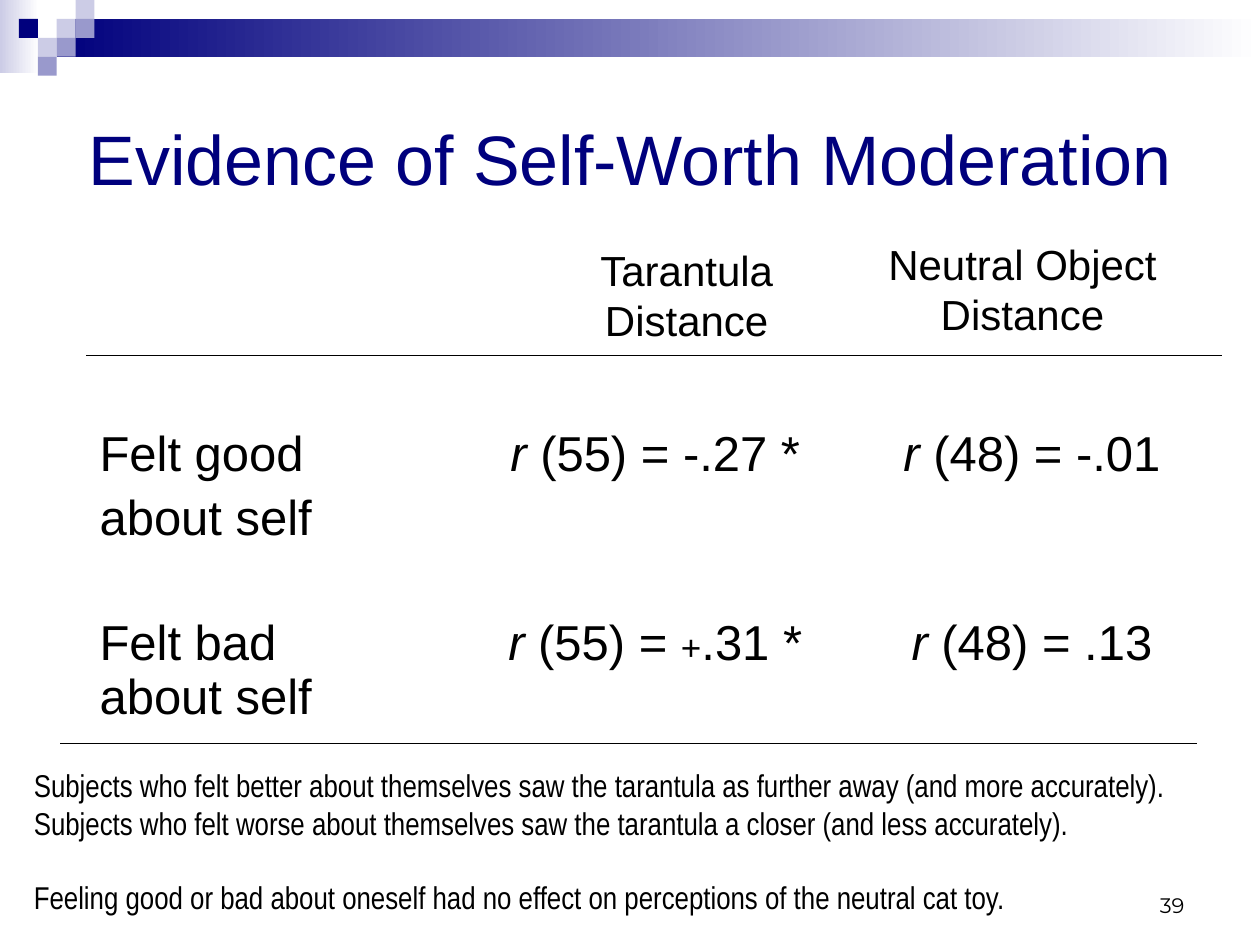
from lxml.etree import SubElement
from pptx import Presentation
from pptx.dml.color import RGBColor
from pptx.enum.shapes import MSO_CONNECTOR, MSO_SHAPE
from pptx.enum.text import MSO_ANCHOR, PP_ALIGN
from pptx.oxml.ns import qn
from pptx.util import Inches, Pt

NAVY = RGBColor(0x00, 0x00, 0x7D)
LAVENDER = RGBColor(0xCC, 0xCC, 0xE6)
PERIWINKLE = RGBColor(0x99, 0x99, 0xCC)
WHITE = RGBColor(0xFF, 0xFF, 0xFF)
BLACK = RGBColor(0x00, 0x00, 0x00)

UNIT = 0.15
SQUARES = [
    (3, 1, LAVENDER), (4, 0, LAVENDER), (4, 1, PERIWINKLE), (2, 2, LAVENDER),
    (1, 1, NAVY), (3, 2, PERIWINKLE), (2, 3, PERIWINKLE),
]
COLUMN_WIDTHS = [3.02, 2.98, 3]
ROW_HEIGHTS = [1.22, 1.69, 1.39]
TOP_MARGINS = [0.57, 0.38]
ROW_LABELS = ["Felt good\nabout self", "Felt bad\vabout self"]
CORRELATIONS = [
    [["(55) = -.27 *"], ["(48) = -.01"]],
    [["(55) = ", "+", ".31 *"], ["(48) = .13"]],
]
FINDINGS = (
    "Subjects who felt better about themselves saw the tarantula as further away "
    "(and more accurately). Subjects who felt worse about themselves saw the "
    "tarantula a closer (and less accurately).\n"
    "Feeling good or bad about oneself had no effect on perceptions of the "
    "neutral cat toy."
)


def inches(*lengths):
    return [Inches(length) for length in lengths]


def style_run(run, size, color=BLACK, font="Arial"):
    run.font.name = font
    run.font.size = Pt(size)
    run.font.color.rgb = color


def style_frame(frame, size, align=PP_ALIGN.LEFT, color=BLACK, font="Arial"):
    for paragraph in frame.paragraphs:
        paragraph.alignment = align
        for run in paragraph.runs:
            style_run(run, size, color, font)


def add_block(slide, box, color, fade=False):
    shape = slide.shapes.add_shape(MSO_SHAPE.RECTANGLE, *inches(*box))
    shape.shadow.inherit = False
    shape.line.fill.background()
    if fade:
        shape.fill.gradient()
        shape.fill.gradient_angle = 0
        for stop, stop_color in zip(shape.fill.gradient_stops, (color, WHITE)):
            stop.color.rgb = stop_color
    else:
        shape.fill.solid()
        shape.fill.fore_color.rgb = color


def add_banner(slide):
    add_block(slide, (0, 0, 0.31, 0.58), LAVENDER, fade=True)
    add_block(slide, (3 * UNIT, UNIT, 10 - 3 * UNIT, 2 * UNIT), NAVY, fade=True)
    for column, row, color in SQUARES:
        add_block(slide, (column * UNIT, row * UNIT, UNIT, UNIT), color)


def add_title(slide, text):
    title = slide.shapes.title
    title.left, title.top, title.width, title.height = inches(0.5, 0.5, 9, 1.5)
    title.text_frame.text = text
    title.text_frame.vertical_anchor = MSO_ANCHOR.MIDDLE
    style_frame(title.text_frame, 40, PP_ALIGN.CENTER, NAVY)


def add_text(slide, box, text, size, align, font="Arial", anchor=MSO_ANCHOR.TOP):
    frame = slide.shapes.add_textbox(*inches(*box)).text_frame
    frame.word_wrap = True
    frame.vertical_anchor = anchor
    frame.text = text
    style_frame(frame, size, align, font=font)
    return frame


def add_border(cell, side):
    border = SubElement(cell._tc.get_or_add_tcPr(), qn(f"a:{side}"), w=str(Pt(1)))
    fill = SubElement(border, qn("a:solidFill"))
    SubElement(fill, qn("a:srgbClr"), val=str(BLACK))


def write_label(cell, text):
    cell.text_frame.text = text
    style_frame(cell.text_frame, 28)
    for paragraph in cell.text_frame.paragraphs[1:]:
        paragraph.space_before = Pt(5.6)


def write_correlation(cell, parts):
    paragraph = cell.text_frame.paragraphs[0]
    paragraph.alignment = PP_ALIGN.CENTER
    for part in ["r ", *parts]:
        run = paragraph.add_run()
        run.text = part
        style_run(run, 20 if part == "+" else 28)
        run.font.italic = part == "r "


def add_results(slide):
    box = inches(0.69, 1.6, sum(COLUMN_WIDTHS), sum(ROW_HEIGHTS))
    table = slide.shapes.add_table(len(ROW_HEIGHTS), len(COLUMN_WIDTHS), *box).table
    table.first_row = table.horz_banding = False
    for column, width in zip(table.columns, COLUMN_WIDTHS):
        column.width = Inches(width)
    for row, height in zip(table.rows, ROW_HEIGHTS):
        row.height = Inches(height)
    for column in range(len(COLUMN_WIDTHS)):
        add_border(table.cell(0, column), "lnB")
        add_border(table.cell(1, column), "lnT")
    for cell in table.iter_cells():
        cell.fill.background()
    rows = zip(TOP_MARGINS, ROW_LABELS, CORRELATIONS)
    for row, (margin, label, correlations) in enumerate(rows, 1):
        write_label(table.cell(row, 0), label)
        for column, parts in enumerate(correlations, 1):
            write_correlation(table.cell(row, column), parts)
        for column in range(len(COLUMN_WIDTHS)):
            table.cell(row, column).margin_top = Inches(margin)


def add_rule(slide, left, right, top):
    ends = inches(left, top, right, top)
    rule = slide.shapes.add_connector(MSO_CONNECTOR.STRAIGHT, *ends)
    rule.line.color.rgb = BLACK
    rule.line.width = Pt(0.75)
    SubElement(rule._element.spPr, qn("a:effectLst"))


def main():
    presentation = Presentation()
    presentation.slide_width, presentation.slide_height = inches(10, 7.5)
    slide = presentation.slides.add_slide(presentation.slide_layouts[5])
    add_banner(slide)
    add_title(slide, "Evidence of Self-Worth Moderation")
    add_results(slide)
    add_rule(slide, 0.48, 9.5, 5.9)
    add_text(slide, (4.18, 1.89, 2.54, 0.91), "Tarantula Distance", 24, PP_ALIGN.CENTER)
    add_text(slide, (6.75, 1.84, 2.73, 0.91), "Neutral Object Distance", 24, PP_ALIGN.CENTER)
    findings = add_text(slide, (0.17, 6.03, 9.52, 1.31), FINDINGS, 18,
                        PP_ALIGN.LEFT, "Arial Narrow")
    findings.paragraphs[1].space_before = Pt(21)
    add_text(slide, (7.17, 6.83, 2.33, 0.5), "39", 12, PP_ALIGN.RIGHT,
             "Montserrat", MSO_ANCHOR.BOTTOM)
    presentation.save("out.pptx")


if __name__ == "__main__":
    main()
